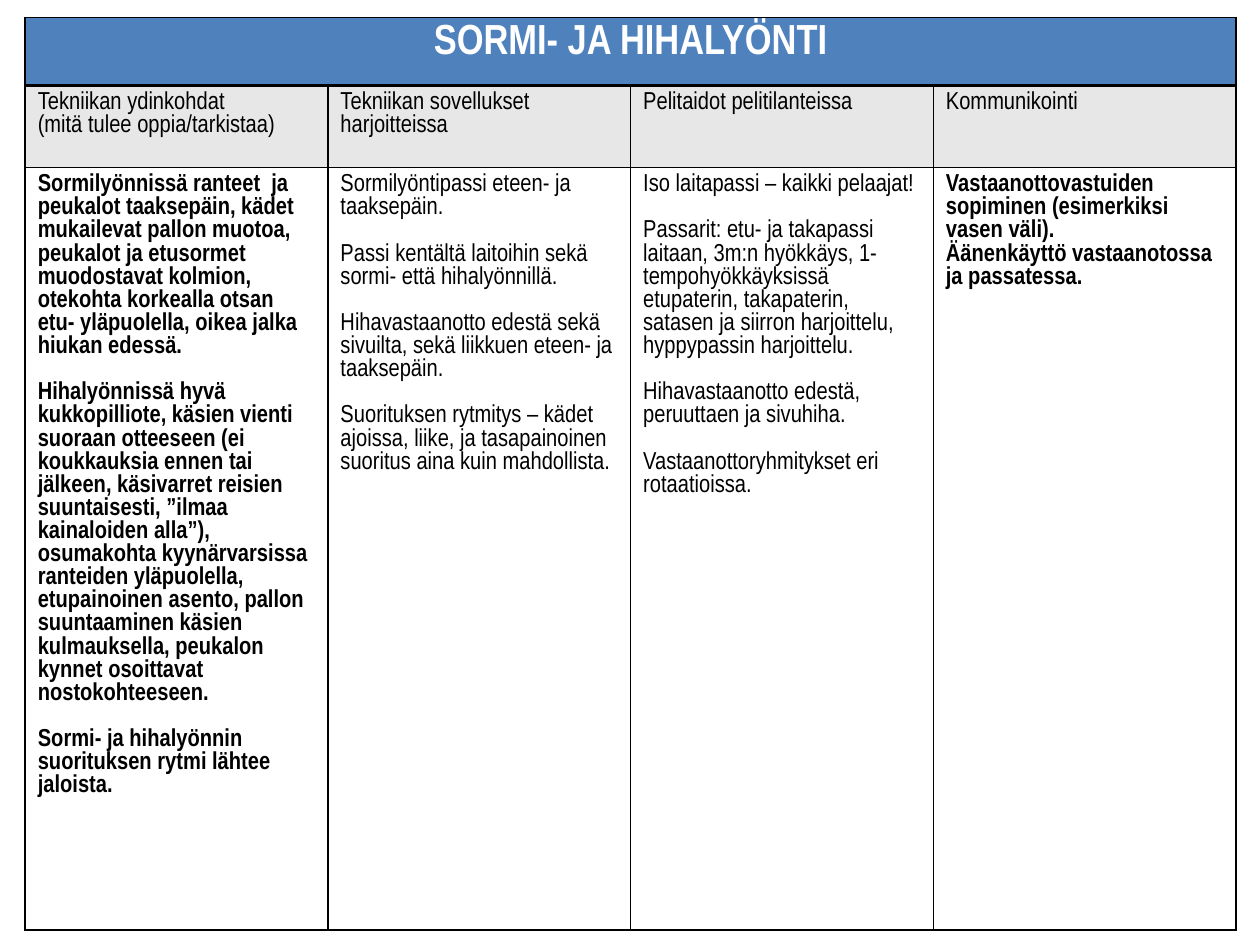
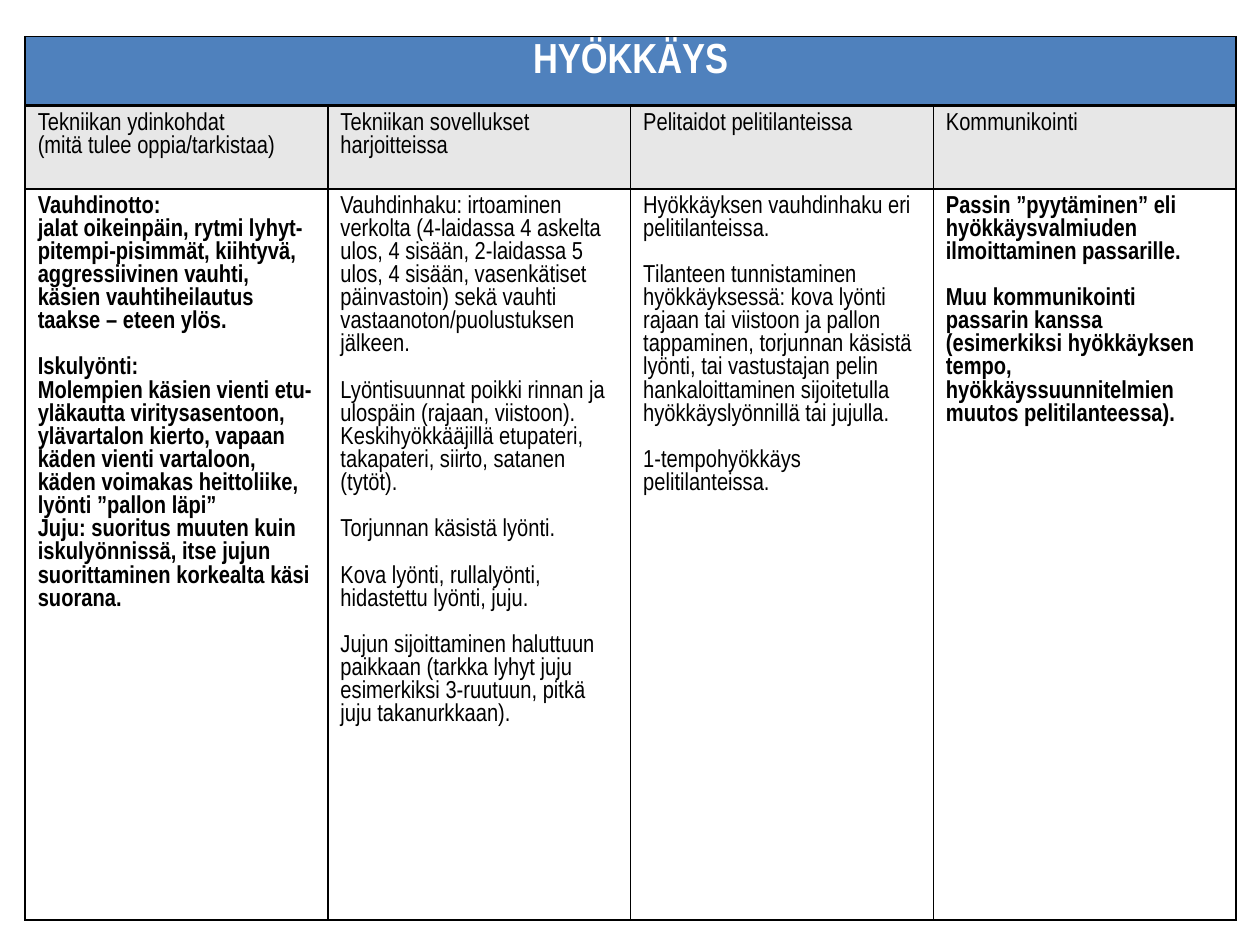
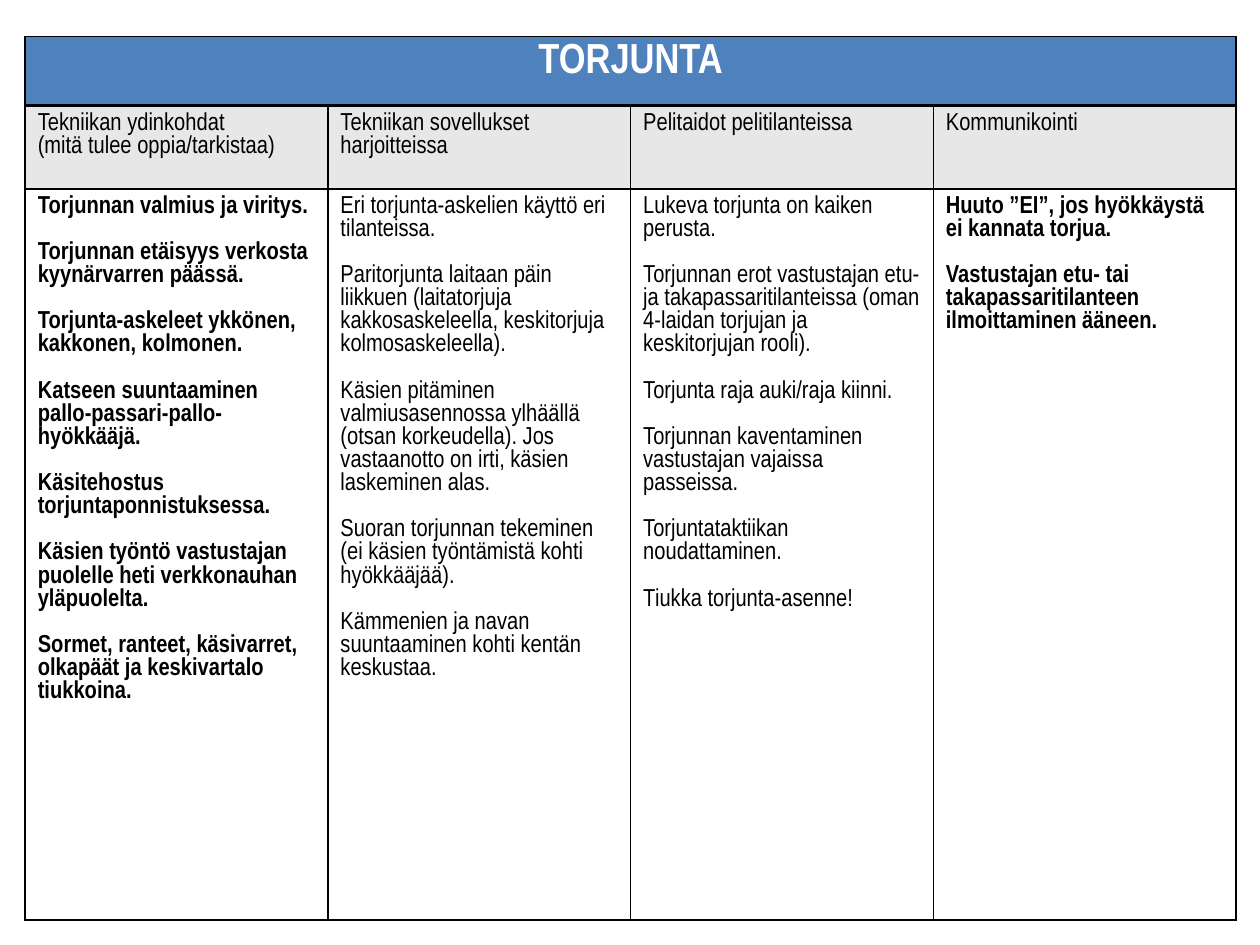
from copy import deepcopy

from lxml import etree
from pptx import Presentation
from pptx.dml.color import RGBColor
from pptx.enum.text import PP_ALIGN as Align
from pptx.oxml.ns import qn
from pptx.util import Inches, Pt

COLS = 4
LEFT, WIDTH = 0.2, 9.61
LINE = 13.2
BLACK, WHITE, BLUE, GREY = "000000", "FFFFFF", "4F81BD", "E7E7E7"
TITLE = {"name": "Arial Narrow", "size": Pt(24), "bold": True}
PLAIN = {"name": "Arial Narrow", "size": Pt(14), "bold": False}
BOLD = {**PLAIN, "bold": True}

HEADERS = [
    "Tekniikan ydinkohdat\n(mitä tulee oppia/tarkistaa)",
    "Tekniikan sovellukset harjoitteissa",
    "Pelitaidot pelitilanteissa",
    "Kommunikointi",
]

SLIDES = [
    ("SORMI- JA HIHALYÖNTI", 0.14, [0.54, 0.65, 6.05], [
        [
            "Sormilyönnissä ranteet  ja peukalot taaksepäin, kädet mukailevat pallon muotoa, "
            "peukalot ja etusormet muodostavat kolmion, otekohta korkealla otsan etu- yläpuolella, "
            "oikea jalka hiukan edessä.",
            "Hihalyönnissä hyvä kukkopilliote, käsien vienti suoraan otteeseen (ei koukkauksia "
            "ennen tai jälkeen, käsivarret reisien suuntaisesti, ”ilmaa kainaloiden alla”), "
            "osumakohta kyynärvarsissa ranteiden yläpuolella, etupainoinen asento, pallon "
            "suuntaaminen käsien kulmauksella, peukalon kynnet osoittavat nostokohteeseen.",
            "Sormi- ja hihalyönnin suorituksen rytmi lähtee jaloista.",
        ],
        [
            "Sormilyöntipassi eteen- ja taaksepäin.",
            "Passi kentältä laitoihin sekä sormi- että hihalyönnillä.",
            "Hihavastaanotto edestä sekä sivuilta, sekä liikkuen eteen- ja taaksepäin.",
            "Suorituksen rytmitys – kädet ajoissa, liike, ja tasapainoinen suoritus aina kuin "
            "mahdollista.",
        ],
        [
            "Iso laitapassi – kaikki pelaajat!",
            "Passarit: etu- ja takapassi laitaan, 3m:n hyökkäys, 1-tempohyökkäyksissä etupaterin, "
            "takapaterin, satasen ja siirron harjoittelu, hyppypassin harjoittelu.",
            "Hihavastaanotto edestä, peruuttaen ja sivuhiha.",
            "Vastaanottoryhmitykset eri rotaatioissa.",
        ],
        [
            "Vastaanottovastuiden sopiminen (esimerkiksi vasen väli).\n"
            "Äänenkäyttö vastaanotossa ja passatessa.",
        ],
    ]),
    ("HYÖKKÄYS", 0.29, [0.55, 0.66, 5.8], [
        [
            "Vauhdinotto:\vjalat oikeinpäin, rytmi lyhyt-pitempi-pisimmät, kiihtyvä, "
            "aggressiivinen vauhti, käsien vauhtiheilautus taakse – eteen ylös.",
            "Iskulyönti:\vMolempien käsien vienti etu-yläkautta viritysasentoon, ylävartalon "
            "kierto, vapaan käden vienti vartaloon, käden voimakas heittoliike, lyönti ”pallon "
            "läpi”\nJuju: suoritus muuten kuin iskulyönnissä, itse jujun suorittaminen korkealta "
            "käsi suorana.",
        ],
        [
            "Vauhdinhaku: irtoaminen verkolta (4-laidassa 4 askelta ulos, 4 sisään, 2-laidassa 5 "
            "ulos, 4 sisään, vasenkätiset päinvastoin) sekä vauhti vastaanoton/puolustuksen "
            "jälkeen.",
            "Lyöntisuunnat poikki rinnan ja ulospäin (rajaan, viistoon).\n"
            "Keskihyökkääjillä etupateri, takapateri, siirto, satanen (tytöt).",
            "Torjunnan käsistä lyönti.",
            "Kova lyönti, rullalyönti, hidastettu lyönti, juju.",
            "Jujun sijoittaminen haluttuun paikkaan (tarkka lyhyt juju esimerkiksi 3-ruutuun, "
            "pitkä juju takanurkkaan).",
        ],
        [
            "Hyökkäyksen vauhdinhaku eri pelitilanteissa.",
            "Tilanteen tunnistaminen hyökkäyksessä: kova lyönti rajaan tai viistoon ja pallon "
            "tappaminen, torjunnan käsistä lyönti, tai vastustajan pelin hankaloittaminen "
            "sijoitetulla hyökkäyslyönnillä tai jujulla.",
            "1-tempohyökkäys pelitilanteissa.",
        ],
        [
            "Passin ”pyytäminen” eli hyökkäysvalmiuden ilmoittaminen passarille.",
            "Muu kommunikointi passarin kanssa (esimerkiksi hyökkäyksen tempo, "
            "hyökkäyssuunnitelmien muutos pelitilanteessa).",
        ],
    ]),
    ("TORJUNTA", 0.29, [0.55, 0.66, 5.8], [
        [
            "Torjunnan valmius ja viritys.",
            "Torjunnan etäisyys verkosta kyynärvarren päässä.",
            "Torjunta-askeleet ykkönen, kakkonen, kolmonen.",
            "Katseen suuntaaminen pallo-passari-pallo-hyökkääjä.",
            "Käsitehostus torjuntaponnistuksessa.",
            "Käsien työntö vastustajan puolelle heti verkkonauhan yläpuolelta.",
            "Sormet, ranteet, käsivarret, olkapäät ja keskivartalo tiukkoina.",
        ],
        [
            "Eri torjunta-askelien käyttö eri tilanteissa.",
            "Paritorjunta laitaan päin liikkuen (laitatorjuja kakkosaskeleella, keskitorjuja "
            "kolmosaskeleella).",
            "Käsien pitäminen valmiusasennossa ylhäällä (otsan korkeudella). Jos vastaanotto on "
            "irti, käsien laskeminen alas.",
            "Suoran torjunnan tekeminen (ei käsien työntämistä kohti hyökkääjää).",
            "Kämmenien ja navan suuntaaminen kohti kentän keskustaa.",
        ],
        [
            "Lukeva torjunta on kaiken perusta.",
            "Torjunnan erot vastustajan etu- ja takapassaritilanteissa (oman 4-laidan torjujan ja "
            "keskitorjujan rooli).",
            "Torjunta raja auki/raja kiinni.",
            "Torjunnan kaventaminen vastustajan vajaissa passeissa.",
            "Torjuntataktiikan noudattaminen.",
            "Tiukka torjunta-asenne!",
        ],
        [
            "Huuto ”EI”, jos hyökkäystä ei kannata torjua.",
            "Vastustajan etu- tai takapassaritilanteen ilmoittaminen ääneen.",
        ],
    ]),
]


def rgb(value):
    return RGBColor.from_string(value)


def fill_cell(cell, blocks, fill, color, fmt, align, edges):
    tf = cell.text_frame
    lines = [(line, i > 0 and j == 0)
             for i, block in enumerate(blocks)
             for j, line in enumerate(block.split("\n"))]
    for n, (line, gap) in enumerate(lines):
        p = tf.add_paragraph() if n else tf.paragraphs[0]
        p.text = line
        p.alignment = align
        if gap:
            p.space_before = Pt(LINE)
        for r in p.runs:
            for key, value in fmt.items():
                setattr(r.font, key, value)
            r.font.color.rgb = rgb(color)
        for br in p._p.findall(qn("a:br")):
            br.append(deepcopy(p.runs[0]._r.rPr))
    tcPr = cell._tc.get_or_add_tcPr()
    for side, width in edges.items():
        ln = etree.SubElement(tcPr, qn(f"a:ln{side}"), w=str(Pt(width)))
        solid = etree.SubElement(ln, qn("a:solidFill"))
        etree.SubElement(solid, qn("a:srgbClr"), val=BLACK)
    cell.fill.solid()
    cell.fill.fore_color.rgb = rgb(fill)


prs = Presentation()
prs.slide_width, prs.slide_height = Inches(10), Inches(7.5)

for title, top, heights, body in SLIDES:
    s = prs.slides.add_slide(prs.slide_layouts[6])
    table = s.shapes.add_table(len(heights), COLS, Inches(LEFT), Inches(top),
                               Inches(WIDTH), Inches(sum(heights))).table
    for flag in ("first_row", "horz_banding"):
        setattr(table, flag, False)
    for row, height in zip(table.rows, heights):
        row.height = Inches(height)
    table.cell(0, 0).merge(table.cell(0, COLS - 1))
    thin = dict.fromkeys("LRTB", 1)
    for c in range(COLS):
        fill_cell(table.cell(0, c), [] if c else [title], BLUE, WHITE, TITLE,
                  Align.CENTER, {**thin, "B": 2})
        fill_cell(table.cell(1, c), [HEADERS[c]], GREY, BLACK, PLAIN,
                  Align.LEFT, {**thin, "T": 2})
        fill_cell(table.cell(2, c), body[c], WHITE, BLACK,
                  BOLD if c in (0, COLS - 1) else PLAIN, Align.LEFT, thin)

prs.save("out.pptx")
